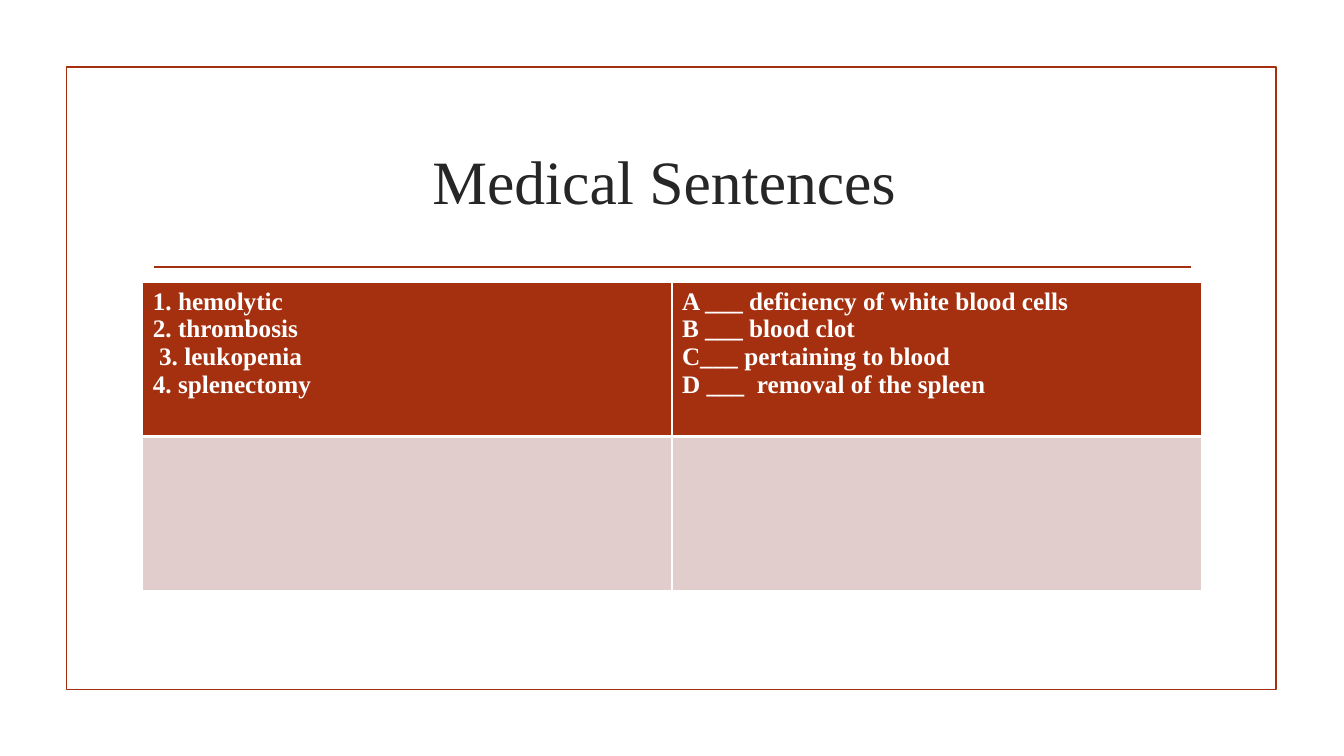
"""Build the Medical Sentences matching slide."""
from dataclasses import dataclass

from lxml import etree
from pptx import Presentation
from pptx import util as u
from pptx.dml import color
from pptx.enum import shapes, text
from pptx.oxml import ns


@dataclass(frozen=True)
class Theme:
    font: str = "Times New Roman"
    accent: str = "A5300F"
    band: str = "E1CDCC"
    ink: str = "262626"
    white: str = "FFFFFF"
    title_size: float = 44
    body_size: float = 18
    rule_width: float = 1.25
    thin_border: float = 1
    thick_border: float = 3


THEME = Theme()
TERMS = ["1. hemolytic", "2. thrombosis", " 3. leukopenia", "4. splenectomy"]
MEANINGS = [
    "A ___ deficiency of white blood cells",
    "B ___ blood clot",
    "C___ pertaining to blood",
    "D ___  removal of the spleen",
]


def rgb(value):
    return color.RGBColor.from_string(value)


def write_text(frame, lines, *, size, ink, bold=False, align=text.PP_ALIGN.LEFT):
    for index, line in enumerate(lines):
        para = frame.paragraphs[0] if index == 0 else frame.add_paragraph()
        para.alignment = align
        span = para.add_run()
        span.text = line
        span.font.name = THEME.font
        span.font.size = u.Pt(size)
        span.font.bold = bold
        span.font.color.rgb = rgb(ink)


def add_frame(page, left, top, width, height):
    box = page.shapes.add_shape(
        shapes.MSO_SHAPE.RECTANGLE, u.Pt(left), u.Pt(top), u.Pt(width), u.Pt(height))
    box.shadow.inherit = False
    box.fill.background()
    box.line.color.rgb = rgb(THEME.accent)
    box.line.width = u.Pt(THEME.rule_width)


def add_rule(page, left, right, top):
    rule = page.shapes.add_connector(
        shapes.MSO_CONNECTOR.STRAIGHT, u.Pt(left), u.Pt(top), u.Pt(right), u.Pt(top))
    rule.line.color.rgb = rgb(THEME.accent)
    rule.line.width = u.Pt(THEME.rule_width)
    etree.SubElement(rule._element.spPr, ns.qn("a:effectLst"))


def add_title(page, title, left, top, width, height):
    box = page.shapes.add_textbox(u.Pt(left), u.Pt(top), u.Pt(width), u.Pt(height))
    box.text_frame.word_wrap = True
    box.text_frame.vertical_anchor = text.MSO_ANCHOR.MIDDLE
    write_text(box.text_frame, [title], size=THEME.title_size, ink=THEME.ink,
               align=text.PP_ALIGN.CENTER)


def set_borders(cell, widths):
    properties = cell._tc.get_or_add_tcPr()
    for side, width in zip("LRTB", widths):
        edge = etree.SubElement(properties, ns.qn(f"a:ln{side}"), w=str(u.Pt(width)))
        fill = etree.SubElement(edge, ns.qn("a:solidFill"))
        etree.SubElement(fill, ns.qn("a:srgbClr"), val=THEME.white)


def add_matching_table(page, rows, left, top, width, height):
    table = page.shapes.add_table(
        len(rows), len(rows[0]), u.Pt(left), u.Pt(top), u.Pt(width), u.Pt(height)).table
    thin, thick = THEME.thin_border, THEME.thick_border
    styles = [(THEME.accent, (thin, thin, thin, thick)),
              (THEME.band, (thin, thin, thick, thin))]
    for row, (fill, widths), cells in zip(table.rows, styles, rows):
        for cell, lines in zip(row.cells, cells):
            set_borders(cell, widths)
            cell.fill.solid()
            cell.fill.fore_color.rgb = rgb(fill)
            write_text(cell.text_frame, lines, size=THEME.body_size,
                       ink=THEME.white, bold=True)


def main():
    deck = Presentation()
    deck.slide_width, deck.slide_height = u.Pt(960), u.Pt(540)
    page = deck.slides.add_slide(deck.slide_layouts[6])
    add_frame(page, 47.5, 48, 864, 444.5)
    add_rule(page, 110, 850.5, 190.8)
    add_title(page, "Medical Sentences ", 102, 77, 756, 103)
    add_matching_table(page, [[TERMS, MEANINGS], [[], []]], 102, 201.8, 756, 220)
    deck.save("out.pptx")


if __name__ == "__main__":
    main()
